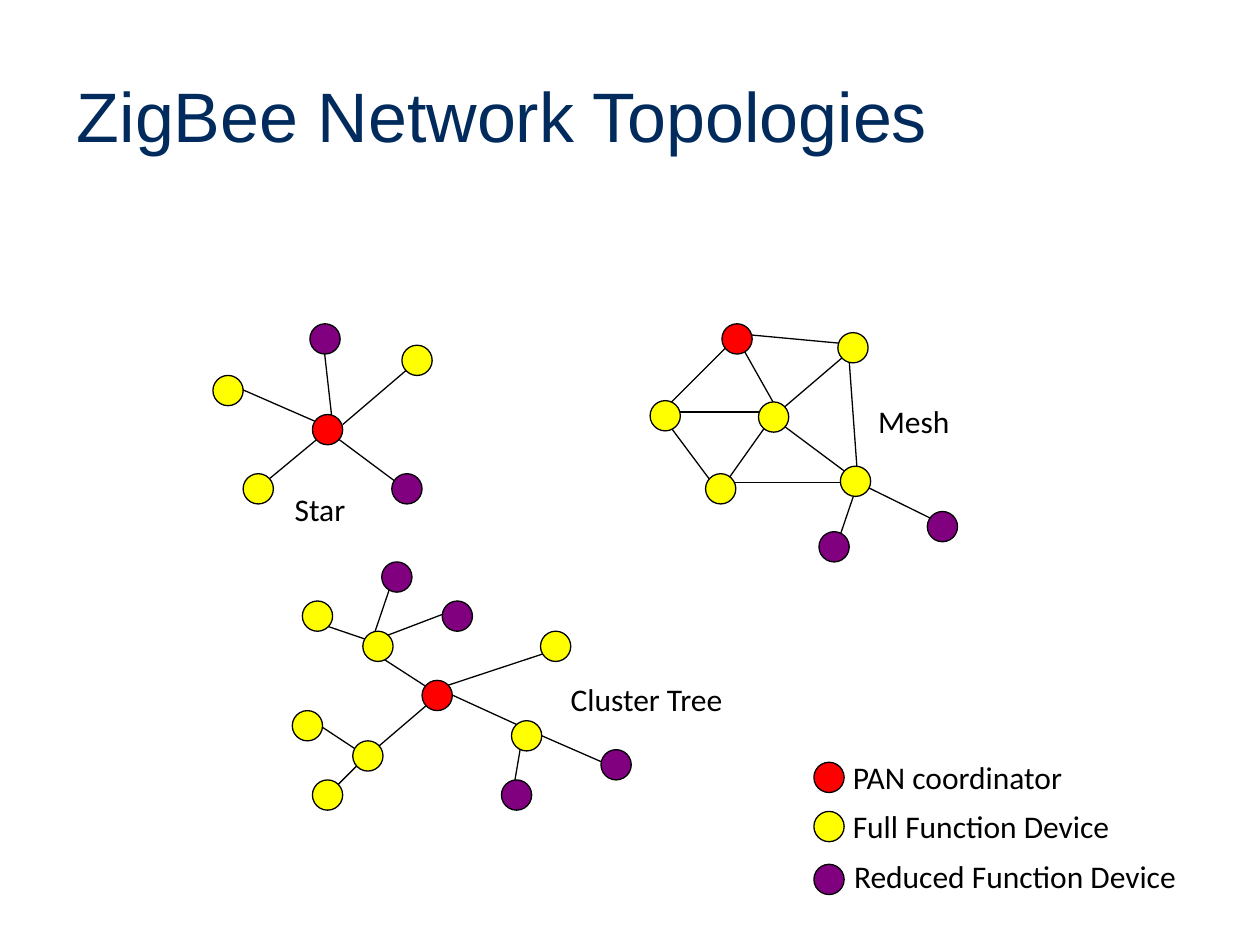
from lxml.etree import SubElement
from pptx import Presentation
from pptx.dml.color import RGBColor
from pptx.enum.shapes import MSO_CONNECTOR as CONNECTOR, MSO_SHAPE as SHAPE
from pptx.enum.text import MSO_ANCHOR as ANCHOR, PP_ALIGN as ALIGN
from pptx.oxml.ns import qn
from pptx.util import Inches, Pt

NAVY = RGBColor(0x00, 0x2B, 0x5C)
BLACK = RGBColor(0, 0, 0)
RED = RGBColor(0xFF, 0, 0)
YELLOW = RGBColor(0xFF, 0xFF, 0)
PURPLE = RGBColor(0x80, 0, 0x80)

NODE_SIZE = 0.24
LINE_WIDTH = Pt(0.75)

STAR = {
    "label": ("Star", 2.24, 3.84, 0.66),
    "links": [
        (2.64, 3.37, 2.56, 2.66), (2.72, 3.37, 3.27, 2.9), (1.85, 3.06, 2.56, 3.37),
        (2.64, 3.45, 3.27, 3.92), (2.56, 3.45, 2.09, 3.84),
    ],
    "nodes": {
        RED: [(2.48, 3.29)],
        YELLOW: [(1.69, 2.98), (3.19, 2.74), (1.93, 3.76)],
        PURPLE: [(2.46, 2.57), (3.11, 3.76)],
    },
}
MESH = {
    "label": ("Mesh", 6.87, 3.14, 0.81),
    "links": [
        (6.81, 3.83, 6.65, 4.3), (6.81, 3.83, 7.44, 4.14), (5.71, 3.83, 6.81, 3.83),
        (6.73, 2.73, 6.81, 3.83), (6.73, 2.73, 5.87, 2.65), (5.87, 2.65, 5.24, 3.28),
        (5.24, 3.28, 5.71, 3.91), (6.18, 3.27, 5.87, 2.72), (6.18, 3.27, 6.73, 2.8),
        (5.31, 3.27, 6.1, 3.27), (6.18, 3.35, 6.81, 3.82), (6.1, 3.35, 5.71, 3.9),
    ],
    "nodes": {
        PURPLE: [(6.5, 4.22), (7.36, 4.06)],
        YELLOW: [(6.02, 3.19), (6.65, 2.64), (6.67, 3.7), (5.6, 3.76), (5.16, 3.18)],
        RED: [(5.73, 2.57)],
    },
}
CLUSTER_TREE = {
    "label": ("Cluster Tree", 4.43, 5.35, 1.58),
    "links": [
        (3.51, 5.48, 4.21, 5.8), (4.06, 6.35, 4.14, 5.88), (4.92, 6.11, 4.21, 5.8),
        (2.48, 5.72, 2.95, 6.03), (2.56, 6.35, 2.88, 6.03), (2.88, 6.03, 3.43, 5.56),
        (3.43, 5.48, 4.37, 5.17), (2.95, 5.17, 3.43, 5.48), (2.95, 5.09, 3.11, 4.62),
        (2.95, 5.09, 3.58, 4.85), (2.48, 4.93, 2.95, 5.09),
    ],
    "nodes": {
        PURPLE: [(3.03, 4.46), (3.51, 4.77), (3.98, 6.19), (4.77, 5.95)],
        YELLOW: [(2.4, 4.77), (2.88, 5.01), (4.29, 5.01), (2.32, 5.64),
                 (2.8, 5.88), (2.48, 6.19), (4.06, 5.72)],
        RED: [(3.35, 5.4)],
    },
}
LEGEND_LEFT = 6.46
LEGEND = [
    (RED, 6.05, ("PAN coordinator", 6.67, 5.97, 2.1)),
    (YELLOW, 6.44, ("Full Function Device", 6.67, 6.36, 2.73)),
    (PURPLE, 6.86, ("Reduced Function Device", 6.68, 6.75, 3.2)),
]


def add_link(group, ends):
    link = group.shapes.add_connector(CONNECTOR.STRAIGHT, *map(Inches, ends))
    link.line.color.rgb = BLACK
    link.line.width = LINE_WIDTH
    SubElement(link._element.spPr, qn("a:effectLst"))


def add_node(group, color, left, top):
    node = group.shapes.add_shape(
        SHAPE.OVAL, *map(Inches, (left, top, NODE_SIZE, NODE_SIZE)))
    node.shadow.inherit = False
    node.fill.solid()
    node.fill.fore_color.rgb = color
    node.line.color.rgb = BLACK
    node.line.width = LINE_WIDTH


def add_label(group, text, left, top, width):
    frame = group.shapes.add_textbox(*map(Inches, (left, top, width, 0.4))).text_frame
    frame.word_wrap = True
    frame.text = text
    font = frame.paragraphs[0].font
    font.name, font.size = "Calibri", Pt(18)
    font.color.rgb = BLACK


def add_topology(slide, topology):
    group = slide.shapes.add_group_shape()
    for ends in topology["links"]:
        add_link(group, ends)
    for color, places in topology["nodes"].items():
        for left, top in places:
            add_node(group, color, left, top)
    add_label(group, *topology["label"])


def add_legend(slide):
    group = slide.shapes.add_group_shape()
    for color, top, label in LEGEND:
        add_node(group, color, LEGEND_LEFT, top)
        add_label(group, *label)


def main():
    deck = Presentation()
    deck.slide_width, deck.slide_height = Inches(10), Inches(7.5)
    slide = deck.slides.add_slide(deck.slide_layouts[5])

    title = slide.shapes.title
    title.left, title.top, title.width, title.height = map(Inches, (0.51, 0.28, 9, 1.25))
    title.text_frame.text = "ZigBee Network Topologies"
    title.text_frame.vertical_anchor = ANCHOR.MIDDLE
    heading = title.text_frame.paragraphs[0]
    heading.alignment = ALIGN.LEFT
    heading.font.name, heading.font.size = "Arial", Pt(40)
    heading.font.color.rgb = NAVY

    for topology in (STAR, MESH, CLUSTER_TREE):
        add_topology(slide, topology)
    add_legend(slide)
    deck.save("out.pptx")


if __name__ == "__main__":
    main()
